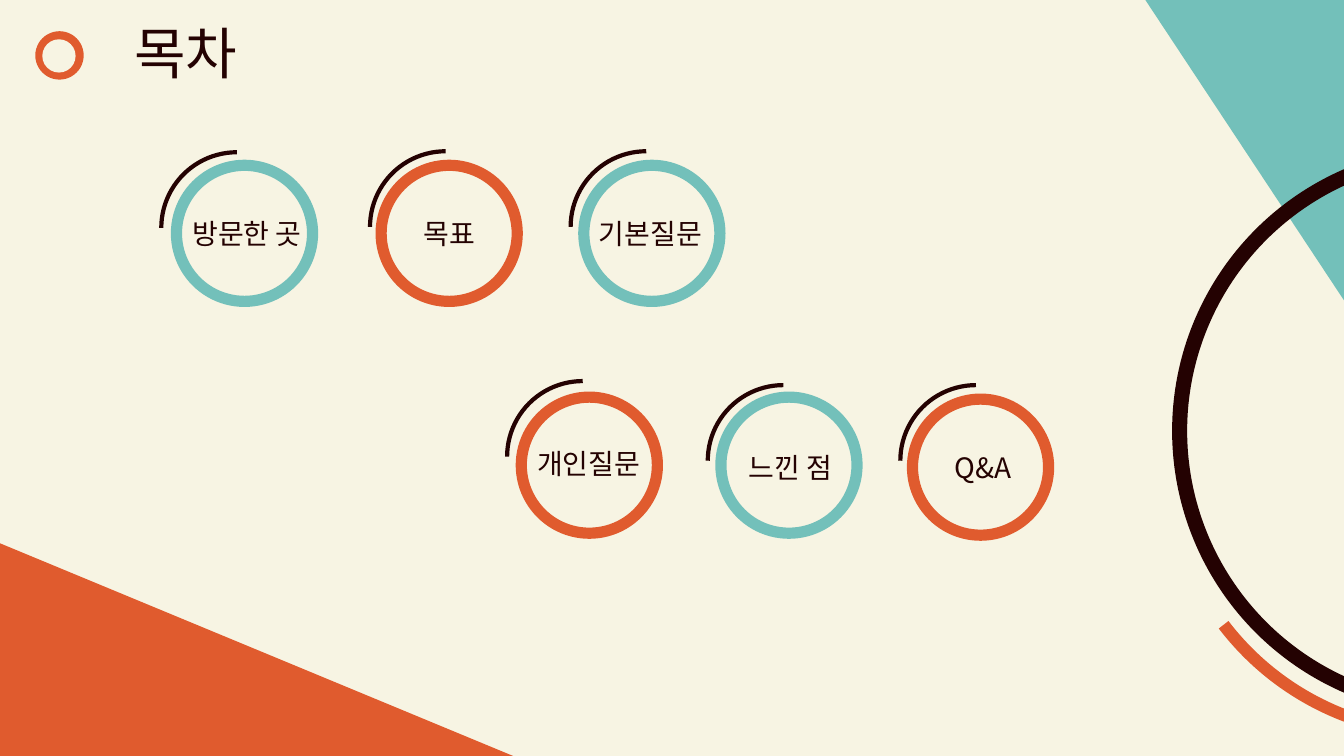
import pptx
import pptx.util
import pptx.dml.color
import pptx.enum.shapes
import pptx.enum.text

Inches = pptx.util.Inches
RGBColor = pptx.dml.color.RGBColor
SHAPE = pptx.enum.shapes.MSO_SHAPE

CREAM = RGBColor(0xF7, 0xF4, 0xE3)
ORANGE = RGBColor(0xE0, 0x5B, 0x2E)
TEAL = RGBColor(0x73, 0xC0, 0xBA)
DARK = RGBColor(0x24, 0x02, 0x02)
FONT = "Noto Sans CJK KR"

deck = pptx.Presentation()
deck.slide_width = Inches(13.33)
deck.slide_height = Inches(7.5)
page = deck.slides.add_slide(deck.slide_layouts[6])
page.background.fill.solid()
page.background.fill.fore_color.rgb = CREAM


def add_figure(parent, kind, left, top, width, height, fill=None, line=None, weight=0, turn=0):
    """Add a preset shape that is filled, outlined or both, turned by degrees."""
    figure = parent.shapes.add_shape(kind, Inches(left), Inches(top), Inches(width), Inches(height))
    figure.shadow.inherit = False
    figure.rotation = turn
    if fill is None:
        figure.fill.background()
    else:
        figure.fill.solid()
        figure.fill.fore_color.rgb = fill
    if line is None:
        figure.line.fill.background()
    else:
        figure.line.color.rgb = line
        figure.line.width = pptx.util.Pt(weight)
    return figure


def add_label(parent, text, left, top, width, height, size):
    box = parent.shapes.add_textbox(Inches(left), Inches(top), Inches(width), Inches(height))
    box.text_frame.word_wrap = True
    box.text_frame.auto_size = pptx.enum.text.MSO_AUTO_SIZE.SHAPE_TO_FIT_TEXT
    para = box.text_frame.paragraphs[0]
    para.alignment = pptx.enum.text.PP_ALIGN.CENTER
    span = para.add_run()
    span.text = text
    span.font.size = pptx.util.Pt(size)
    span.font.name = FONT
    span.font.color.rgb = DARK


# Corner triangles
add_figure(page, SHAPE.RIGHT_TRIANGLE, 0, 5.39, 5.21, 2.16, fill=ORANGE)
add_figure(page, SHAPE.RIGHT_TRIANGLE, 11.36, 0, 1.97, 2.98, fill=TEAL, turn=180)

# Large arcs at the right edge: left, top, turn, start and end in degrees
for left, top, turn, start, end, color, weight in [
    (11.7, 1.52, 266.4, 204.64, 341.98, DARK, 10.75),
    (11.57, 1.77, 257.8, 212.43, 244.81, ORANGE, 8.75),
]:
    arc = add_figure(page, SHAPE.ARC, left, top, 5.51, 5.51, line=color, weight=weight, turn=turn)
    # Angles are stored in 60000ths of a degree, adjustments in 100000ths
    arc.adjustments[0] = start * 0.6
    arc.adjustments[1] = end * 0.6

# Title with its ring
add_label(page, "목차", 0.61, 0.13, 2.47, 0.77, 40)
bullet = page.shapes.add_group_shape()
add_figure(bullet, SHAPE.OVAL, 0.35, 0.31, 0.48, 0.48, fill=ORANGE)
add_figure(bullet, SHAPE.OVAL, 0.42, 0.39, 0.33, 0.33, fill=CREAM)

# Contents: label, colour, then left and top of the ring, the arc and the label
CONTENTS = [
    ("방문한 곳", TEAL, (1.75, 1.64), (1.6, 1.51), (1.41, 2.1)),
    ("목표", ORANGE, (3.78, 1.64), (3.67, 1.5), (3.42, 2.1)),
    ("기본질문", TEAL, (5.79, 1.64), (5.66, 1.5), (5.41, 2.1)),
    ("개인질문", ORANGE, (5.17, 3.94), (5.03, 3.78), (4.8, 4.38)),
    ("느낀 점", TEAL, (7.15, 3.94), (7.02, 3.82), (6.8, 4.42)),
    ("Q&A", ORANGE, (9.05, 3.96), (8.93, 3.82), (8.71, 4.42)),
]
for label, color, ring_at, arc_at, label_at in CONTENTS:
    item = page.shapes.add_group_shape()
    add_figure(item, SHAPE.OVAL, *ring_at, 1.35, 1.35, line=color, weight=8)
    add_figure(item, SHAPE.ARC, *arc_at, 1.5, 1.5, line=DARK, weight=3, turn=270)
    add_label(item, label, *label_at, 2.08, 0.44, 20)

deck.save("out.pptx")
